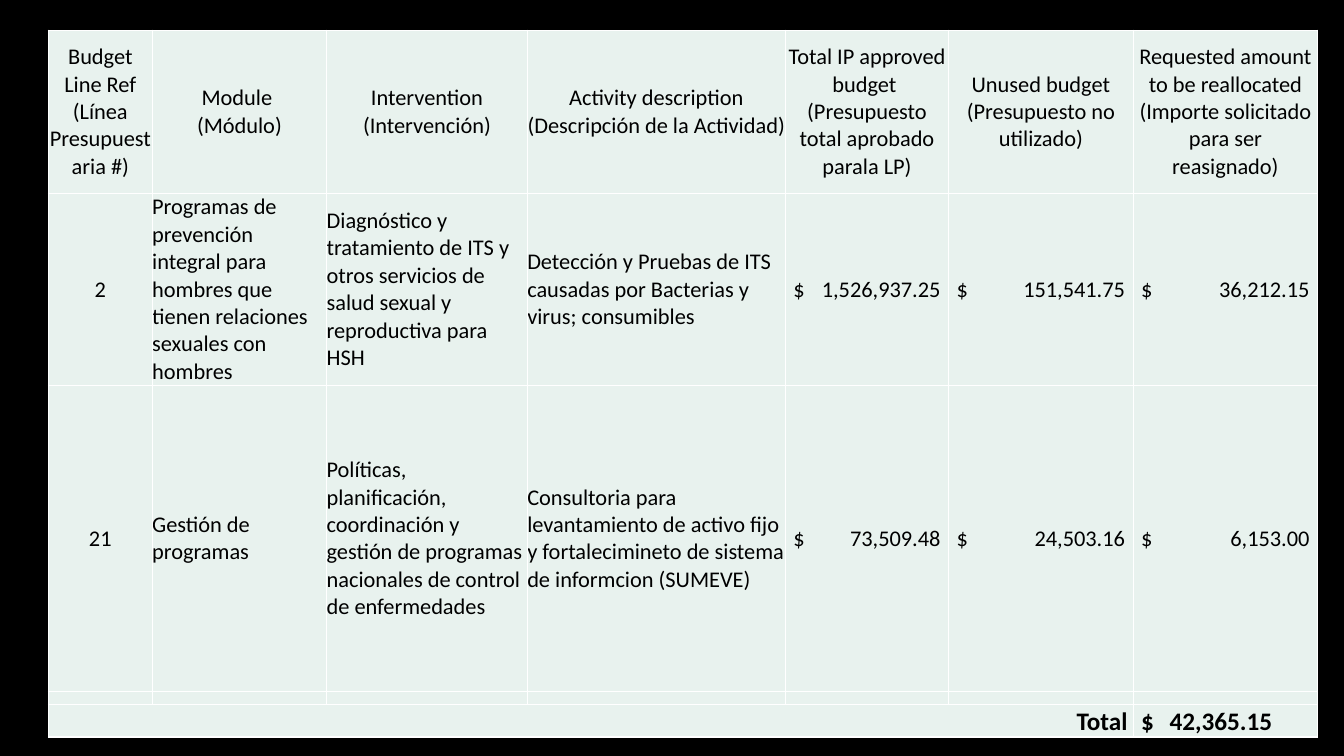
from lxml import etree
from pptx import Presentation
from pptx.dml.color import RGBColor
from pptx.enum.text import MSO_ANCHOR, PP_ALIGN
from pptx.oxml.ns import qn
from pptx.util import Inches, Pt

LEFT, CENTER, RIGHT = PP_ALIGN.LEFT, PP_ALIGN.CENTER, PP_ALIGN.RIGHT
MIDDLE, BOTTOM = MSO_ANCHOR.MIDDLE, MSO_ANCHOR.BOTTOM

FONT = "Calibri"
BLACK, WHITE, MINT = "000000", "FFFFFF", "E8F2EE"
PAD = 0.08

COLS = [1.03, 1.73, 1.99, 2.56, 1.62, 1.83, 1.83]
ROWS = [1.62, 1.9, 3.04, 0.13, 0.32]
HEADS = [
    "Budget Line Ref\n(Línea Presupuestaria #)",
    "Module \n(Módulo)",
    "Intervention\n(Intervención)",
    "Activity description\n(Descripción de la Actividad)",
    "Total IP approved budget \n(Presupuesto total aprobado parala LP)",
    "Unused budget\n(Presupuesto no utilizado)",
    "Requested amount to be reallocated\n(Importe solicitado para ser reasignado)",
]
LINES = [
    ["2",
     "Programas de prevención integral para hombres que tienen relaciones "
     "sexuales con hombres",
     "Diagnóstico y tratamiento de ITS y otros servicios de salud sexual y "
     "reproductiva para HSH",
     "Detección y Pruebas de ITS causadas por Bacterias y virus; consumibles",
     "1,526,937.25", "151,541.75", "36,212.15"],
    ["21",
     "Gestión de programas",
     "Políticas, planificación, coordinación y gestión de programas "
     "nacionales de control de enfermedades",
     "Consultoria para levantamiento de activo fijo y fortalecimineto de "
     "sistema de informcion (SUMEVE)",
     "73,509.48", "24,503.16", "6,153.00"],
]
TOTAL = "42,365.15"


def rgb(code):
    return RGBColor.from_string(code)


def style(cell):
    """Remove the margins, draw the white borders and fill the cell."""
    cell.margin_left = cell.margin_right = 0
    cell.margin_top = cell.margin_bottom = 0
    props = cell._tc.get_or_add_tcPr()
    for side in ("lnL", "lnR", "lnT", "lnB"):
        line = etree.SubElement(props, qn(f"a:{side}"), w=str(Pt(1)))
        fill = etree.SubElement(line, qn("a:solidFill"))
        etree.SubElement(fill, qn("a:srgbClr"), val=WHITE)
    cell.fill.solid()
    cell.fill.fore_color.rgb = rgb(MINT)


def write(cell, text, align=LEFT, size=16, bold=False, anchor=MIDDLE):
    cell.vertical_anchor = anchor
    para = cell.text_frame.paragraphs[0]
    para.alignment = align
    for i, part in enumerate(text.split("\n")):
        if i:
            para.add_line_break()
        run = para.add_run()
        run.text = part
        run.font.name = FONT
        run.font.size = Pt(size)
        run.font.bold = bold
        run.font.color.rgb = rgb(BLACK)


def money(cell, amount, stop, **look):
    """Put the dollar sign at the left and end the amount at a right tab."""
    write(cell, f"$\t{amount}", **look)
    cell.margin_left = Inches(PAD)
    props = cell.text_frame.paragraphs[0]._p.get_or_add_pPr()
    tabs = etree.SubElement(props, qn("a:tabLst"))
    etree.SubElement(tabs, qn("a:tab"), pos=str(Inches(stop)), algn="r")


def shrink(cell):
    """Give an empty cell small text so that its row stays thin."""
    para = cell.text_frame.paragraphs[0]._p
    etree.SubElement(para, qn("a:endParaRPr"), sz="700")


def budget(slide, left, top):
    frame = slide.shapes.add_table(
        len(ROWS), len(COLS), Inches(left), Inches(top),
        Inches(sum(COLS)), Inches(sum(ROWS)))
    table = frame.table
    table.first_row = table.horz_banding = False
    for col, width in zip(table.columns, COLS):
        col.width = Inches(width)
    for row, height in zip(table.rows, ROWS):
        row.height = Inches(height)
    for cell in table.iter_cells():
        style(cell)

    for c, head in enumerate(HEADS):
        write(table.cell(0, c), head, CENTER)
        shrink(table.cell(3, c))
    for r, line in enumerate(LINES, 1):
        for c, text in enumerate(line):
            cell = table.cell(r, c)
            if c > 3:
                money(cell, text, COLS[c] - 2 * PAD)
            else:
                write(cell, text, LEFT if c else CENTER)

    last = len(ROWS) - 1
    look = {"size": 18, "bold": True, "anchor": BOTTOM}
    label = table.cell(last, 0)
    label.merge(table.cell(last, 5))
    write(label, "Total ", RIGHT, **look)
    money(table.cell(last, 6), TOTAL, 1.3, **look)


def main():
    deck = Presentation()
    deck.slide_width, deck.slide_height = Inches(13.33), Inches(7.5)
    slide = deck.slides.add_slide(deck.slide_layouts[6])
    slide.background.fill.solid()
    slide.background.fill.fore_color.rgb = rgb(BLACK)
    budget(slide, 0.48, 0.3)
    deck.save("out.pptx")


if __name__ == "__main__":
    main()
